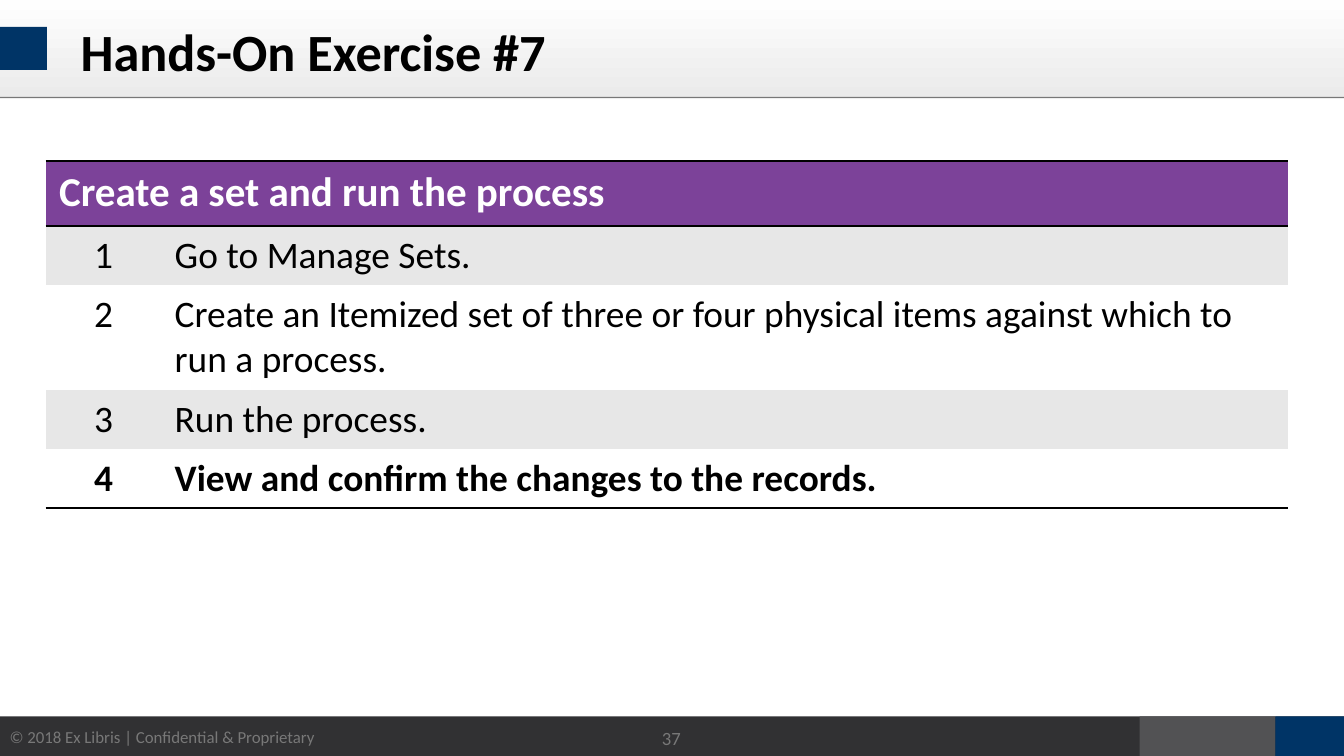
from lxml import etree
from pptx import Presentation
from pptx.dml.color import RGBColor
from pptx.enum import shapes, text
from pptx.oxml.ns import qn
from pptx.util import Inches, Pt

COLORS = {
    "black": "000000", "white": "FFFFFF", "dark": "313133", "slate": "525254",
    "navy": "003466", "grey": "787878", "band": "E7E7E7", "purple": "7C4299",
    "pale": "FEFEFE", "mist": "EBEBEB",
}
TITLE = "Hands-On Exercise #7"
HEAD = "Create a set and run the process"
STEPS = [
    "Go to Manage Sets.",
    "Create an Itemized set of three or four physical items against which to run a process.",
    "Run the process.",
    "View and confirm the changes to the records.",
]
BARS = [
    ((0, 5.33, 10, 0.32), ["dark"]),
    ((8.48, 5.33, 1.01, 0.32), ["slate"]),
    ((9.49, 5.33, 0.51, 0.32), ["navy"]),
    ((0, 0, 10, 0.72), ["pale", "mist"]),
    ((0, 0.2, 0.35, 0.32), ["navy"]),
    ((0, 0.72, 10, 0.01), ["grey"]),
]
NOTES = [
    ((-0.04, 5.36, 2.49, 0.25), "© 2018 Ex Libris | Confidential & Proprietary", 9, False),
    ((4.7, 5.29, 0.59, 0.4), "37", 10, True),
]
COLS = [0.86, 8.38]
ROWS = [0.48, 0.44, 0.78, 0.44, 0.44]
PLAIN = "{2D5ABB26-0587-4C30-8999-92F81FD0307C}"


def rgb(name):
    return RGBColor.from_string(COLORS[name])


def write(frame, words, size, color, bold=False, align=text.PP_ALIGN.LEFT):
    frame.text = words
    para = frame.paragraphs[0]
    para.alignment = align
    font = para.runs[0].font
    font.name, font.size, font.bold = "Calibri", Pt(size), bold
    font.color.rgb = rgb(color)


def add_bar(slide, box, fills):
    bar = slide.shapes.add_shape(shapes.MSO_SHAPE.RECTANGLE, *map(Inches, box))
    bar.shadow.inherit = False
    bar.line.fill.background()
    if len(fills) == 1:
        bar.fill.solid()
        bar.fill.fore_color.rgb = rgb(fills[0])
    else:
        bar.fill.gradient()
        bar.fill.gradient_angle = 270
        for stop, name in zip(bar.fill.gradient_stops, fills):
            stop.color.rgb = rgb(name)


def add_note(slide, box, words, size, wrap):
    note = slide.shapes.add_textbox(*map(Inches, box))
    frame = note.text_frame
    frame.word_wrap = wrap
    frame.vertical_anchor = text.MSO_ANCHOR.MIDDLE
    write(frame, words, size, "grey", align=text.PP_ALIGN.CENTER)


def paint(cell, color, sides=()):
    cell.fill.solid()
    cell.fill.fore_color.rgb = rgb(color)
    props = cell._tc.get_or_add_tcPr()
    for spot, side in enumerate(sides):
        line = etree.Element(qn("a:ln" + side), w=str(Pt(1.5)))
        fill = etree.SubElement(line, qn("a:solidFill"))
        etree.SubElement(fill, qn("a:srgbClr"), val=COLORS["black"])
        props.insert(spot, line)


def add_steps(slide):
    box = (0.34, 1.2, sum(COLS), sum(ROWS))
    table = slide.shapes.add_table(len(ROWS), len(COLS), *map(Inches, box)).table
    table._tbl.tblPr.find(qn("a:tableStyleId")).text = PLAIN
    for col, width in zip(table.columns, COLS):
        col.width = Inches(width)
    for row, height in zip(table.rows, ROWS):
        row.height = Inches(height)
    head = table.cell(0, 0)
    head.merge(table.cell(0, 1))
    write(head.text_frame, HEAD, 22, "white", True)
    for cell in table.rows[0].cells:
        paint(cell, "purple", "TB")
    for num, step in enumerate(STEPS, 1):
        last = num == len(STEPS)
        pairs = [(str(num), text.PP_ALIGN.CENTER), (step, text.PP_ALIGN.LEFT)]
        for cell, (words, align) in zip(table.rows[num].cells, pairs):
            write(cell.text_frame, words, 20, "black", last, align)
            paint(cell, "band" if num % 2 else "white", "B" if last else "")


def main():
    deck = Presentation()
    deck.slide_width, deck.slide_height = Inches(10), Inches(10 * 9 / 16)
    slide = deck.slides.add_slide(deck.slide_layouts[5])
    for box, fills in BARS:
        add_bar(slide, box, fills)
    title = slide.shapes.title
    slide.shapes.element.append(title.element)
    title.left, title.top, title.width, title.height = map(Inches, (0.5, 0.06, 9.07, 0.63))
    title.text_frame.vertical_anchor = text.MSO_ANCHOR.MIDDLE
    write(title.text_frame, TITLE, 28, "black", True)
    for note in NOTES:
        add_note(slide, *note)
    add_steps(slide)
    deck.save("out.pptx")


if __name__ == "__main__":
    main()
